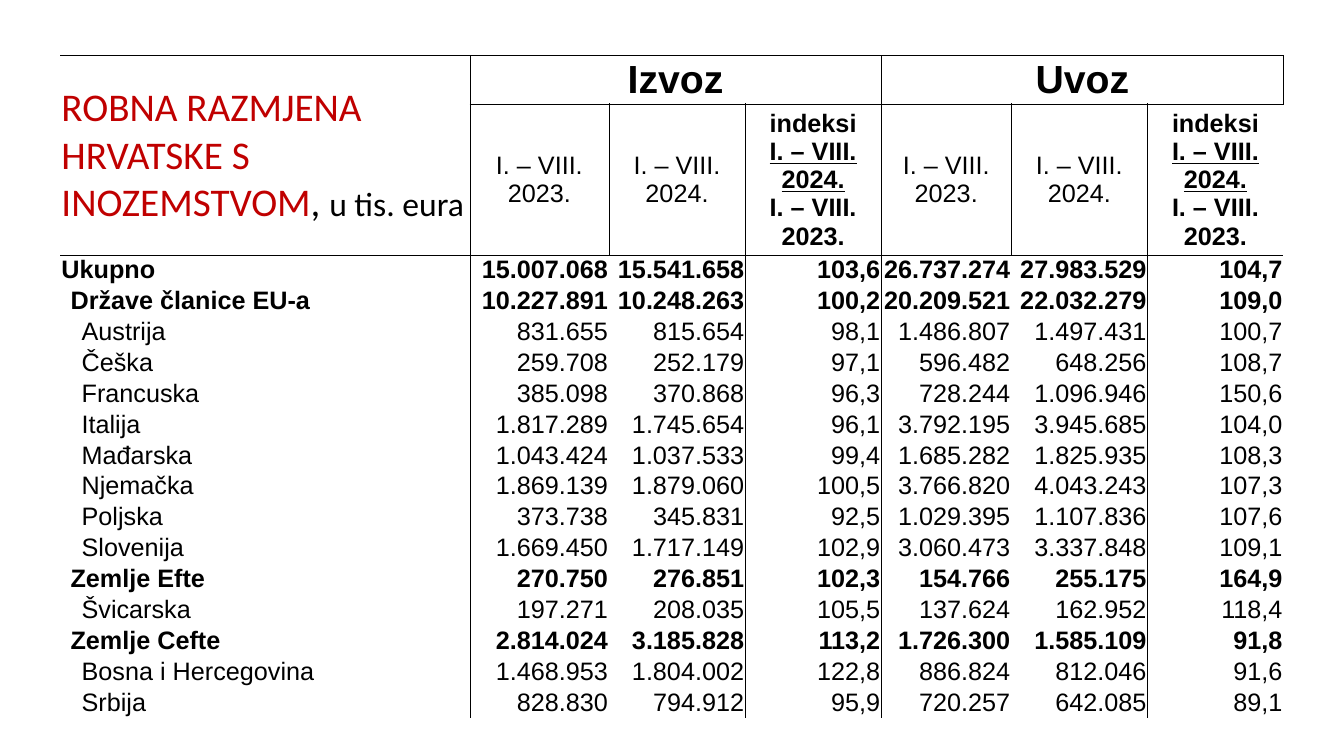
import pptx
import pptx.dml.color
import pptx.enum.text
import pptx.oxml
import pptx.oxml.ns
import pptx.util

Inches = pptx.util.Inches
ALIGN = pptx.enum.text.PP_ALIGN
ANCHOR = pptx.enum.text.MSO_ANCHOR

COLUMN_WIDTHS = [4.06, 1.38, 1.35, 1.35, 1.29, 1.35, 1.35]
HEADER_HEIGHTS = [0.48, 1.5]
BODY_HEIGHT = 4.6
LEVEL_INDENTS = [0.01, 0.1, 0.21]
HEADER_RULES = [{1, 4, 7}, {1, 2, 3, 4, 5, 6}]
BODY_RULES = {1, 3, 4, 6}

TRADE = [
    (0, "Ukupno", "15.007.068 15.541.658 103,6 26.737.274 27.983.529 104,7"),
    (1, "Države članice EU-a", "10.227.891 10.248.263 100,2 20.209.521 22.032.279 109,0"),
    (2, "Austrija", "831.655 815.654 98,1 1.486.807 1.497.431 100,7"),
    (2, "Češka", "259.708 252.179 97,1 596.482 648.256 108,7"),
    (2, "Francuska", "385.098 370.868 96,3 728.244 1.096.946 150,6"),
    (2, "Italija", "1.817.289 1.745.654 96,1 3.792.195 3.945.685 104,0"),
    (2, "Mađarska", "1.043.424 1.037.533 99,4 1.685.282 1.825.935 108,3"),
    (2, "Njemačka", "1.869.139 1.879.060 100,5 3.766.820 4.043.243 107,3"),
    (2, "Poljska", "373.738 345.831 92,5 1.029.395 1.107.836 107,6"),
    (2, "Slovenija", "1.669.450 1.717.149 102,9 3.060.473 3.337.848 109,1"),
    (1, "Zemlje Efte", "270.750 276.851 102,3 154.766 255.175 164,9"),
    (2, "Švicarska", "197.271 208.035 105,5 137.624 162.952 118,4"),
    (1, "Zemlje Cefte", "2.814.024 3.185.828 113,2 1.726.300 1.585.109 91,8"),
    (2, "Bosna i Hercegovina", "1.468.953 1.804.002 122,8 886.824 812.046 91,6"),
    (2, "Srbija", "828.830 794.912 95,9 720.257 642.085 89,1"),
]


def color(value):
    """Turn a hex string into a colour."""
    return pptx.dml.color.RGBColor.from_string(value)


def add_text(para, text, size=18, font="Arial", bold=False, underline=False, fill="000000"):
    """Append one formatted span to a paragraph."""
    span = para.add_run()
    span.text = text
    span.font.size = pptx.util.Pt(size)
    span.font.name = font
    span.font.bold = bold
    span.font.underline = underline
    span.font.color.rgb = color(fill)


def prepare_cell(cell, align=ALIGN.LEFT, anchor=ANCHOR.TOP, indent=0.01):
    """Set a cell's margins and alignment and return its paragraph."""
    cell.margin_left = Inches(indent)
    cell.margin_right = cell.margin_top = Inches(0.01)
    cell.margin_bottom = 0
    cell.vertical_anchor = anchor
    para = cell.text_frame.paragraphs[0]
    para.alignment = align
    return para


def set_border(cell, side, visible):
    """Draw or clear the border on one side (L, R, T or B) of a cell."""
    fill = '<a:solidFill><a:srgbClr val="000000"/></a:solidFill>' if visible else "<a:noFill/>"
    namespace = pptx.oxml.ns.nsdecls("a")
    border = f'<a:ln{side} {namespace} w="{pptx.util.Pt(0.5)}">{fill}</a:ln{side}>'
    cell._tc.get_or_add_tcPr().append(pptx.oxml.parse_xml(border))


def rule_table(table):
    """Apply the grid of rules and clear the fill of every cell."""
    for row in range(len(table.rows)):
        verticals = HEADER_RULES[row] if row < 2 else BODY_RULES
        for column in range(len(table.columns)):
            cell = table.cell(row, column)
            right = column + cell.span_width if cell.is_merge_origin else column + 1
            bottom = row + cell.span_height if cell.is_merge_origin else row + 1
            set_border(cell, "L", column in verticals)
            set_border(cell, "R", right in verticals)
            for side, edge in (("T", row), ("B", bottom)):
                set_border(cell, side, edge in (0, 2) or (edge == 1 and column > 0))
            cell.fill.background()


def fill_header(table):
    """Write the title cell and the two groups of column headings."""
    table.cell(0, 0).merge(table.cell(1, 0))
    para = prepare_cell(table.cell(0, 0), anchor=ANCHOR.MIDDLE)
    add_text(para, "ROBNA RAZMJENA HRVATSKE S INOZEMSTVOM", size=28, font="Calibri", fill="C00000")
    add_text(para, ", ", size=28, font="Calibri")
    add_text(para, "u tis. eura", size=24, font="Calibri")

    for first, group in ((1, "Izvoz"), (4, "Uvoz")):
        table.cell(0, first).merge(table.cell(0, first + 2))
        para = prepare_cell(table.cell(0, first), ALIGN.CENTER, ANCHOR.MIDDLE)
        add_text(para, group, size=28, bold=True)
        periods = ["I. – VIII. 2023.", "I. – VIII. 2024."]
        for offset, period in enumerate(periods):
            para = prepare_cell(table.cell(1, first + offset), ALIGN.CENTER, ANCHOR.MIDDLE)
            add_text(para, period)
        para = prepare_cell(table.cell(1, first + 2), ALIGN.CENTER, ANCHOR.MIDDLE)
        add_text(para, "indeksi", bold=True)
        para.add_line_break()
        add_text(para, periods[1], bold=True, underline=True)
        para.add_line_break()
        add_text(para, periods[0], bold=True)


def fill_body(table):
    """Write the trade figures, with group rows in bold."""
    for row, (level, name, figures) in enumerate(TRADE, start=2):
        para = prepare_cell(table.cell(row, 0), indent=LEVEL_INDENTS[level])
        add_text(para, name, bold=level < 2)
        for column, figure in enumerate(figures.split(), start=1):
            para = prepare_cell(table.cell(row, column), ALIGN.RIGHT)
            add_text(para, figure, bold=level < 2)


def add_trade_table(page):
    """Add the foreign trade table to the page."""
    heights = HEADER_HEIGHTS + [BODY_HEIGHT / len(TRADE)] * len(TRADE)
    table = page.shapes.add_table(
        len(heights), len(COLUMN_WIDTHS), Inches(0.6), Inches(0.55),
        Inches(sum(COLUMN_WIDTHS)), Inches(sum(heights)),
    ).table
    table.first_row = table.horz_banding = False
    for column, width in zip(table.columns, COLUMN_WIDTHS):
        column.width = Inches(width)
    for row, height in zip(table.rows, heights):
        row.height = Inches(height)
    fill_header(table)
    fill_body(table)
    rule_table(table)


def main():
    """Build and save the deck."""
    deck = pptx.Presentation()
    deck.slide_width = Inches(13.33)
    deck.slide_height = Inches(7.5)
    page = deck.slides.add_slide(deck.slide_layouts[6])
    add_trade_table(page)
    deck.save("out.pptx")


if __name__ == "__main__":
    main()
